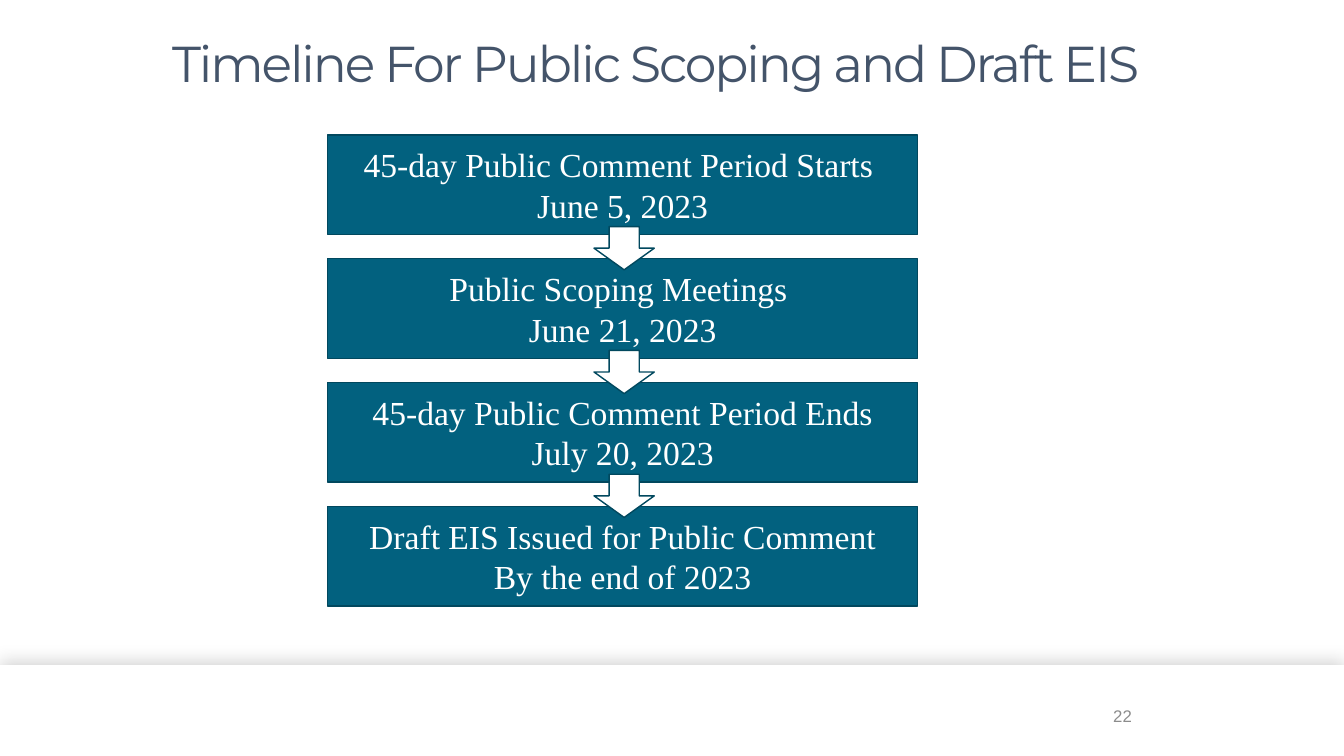
from pptx import Presentation
from pptx import util as u
from pptx.dml.color import RGBColor
from pptx.enum import shapes, text
from pptx.oxml import parse_xml
from pptx.oxml.ns import nsdecls

WHITE = RGBColor(0xFF, 0xFF, 0xFF)
TEAL = RGBColor(0x02, 0x61, 0x7F)
EDGE = RGBColor(0x01, 0x48, 0x5E)
SLATE = RGBColor(0x44, 0x54, 0x6A)
GREY = RGBColor(0x8C, 0x8C, 0x8C)

STEPS = [
    ("45-day Public Comment Period Starts ", "June 5, 2023"),
    ("Public Scoping Meetings ", "June 21, 2023"),
    ("45-day Public Comment Period Ends", "July 20, 2023"),
    ("Draft EIS Issued for Public Comment", "By the end of 2023"),
]
SHADOW = (
    f'<a:outerShdw {nsdecls("a")} blurRad="152400" dist="38100" dir="16200000" '
    'algn="b" rotWithShape="0"><a:srgbClr val="000000"><a:alpha val="17000"/>'
    '</a:srgbClr></a:outerShdw>'
)


def place(shape, left, top, width, height):
    shape.left, shape.top = u.Cm(left), u.Cm(top)
    shape.width, shape.height = u.Cm(width), u.Cm(height)


def write(shape, lines, face, size, color):
    frame = shape.text_frame
    frame.word_wrap = True
    frame.vertical_anchor = text.MSO_ANCHOR.MIDDLE
    frame.text = "\n".join(lines)
    for para in frame.paragraphs:
        para.alignment = text.PP_ALIGN.CENTER
        para.font.name = face
        para.font.size = u.Pt(size)
        para.font.color.rgb = color


def block(slide, kind, box, fill, edge=None):
    shape = slide.shapes.add_shape(kind, *map(u.Cm, box))
    shape.shadow.inherit = False
    shape.fill.solid()
    shape.fill.fore_color.rgb = fill
    if edge is None:
        shape.line.fill.background()
    else:
        shape.line.color.rgb = edge
        shape.line.width = u.Pt(1)
    return shape


def header(slide, left, top, width, height):
    title = slide.shapes.title
    place(title, left, top, width, height)
    write(title, ["Timeline For Public Scoping and Draft EIS"],
          "Montserrat", 36, SLATE)
    para = title.text_frame.paragraphs[0]
    para.line_spacing = 0.9
    # Tighter letter spacing
    para.runs[0].font._element.set("spc", "-150")


def timeline(slide, left, top, width, height):
    tall = 2.51
    pitch = (height - tall) / (len(STEPS) - 1)
    # Step boxes
    for i, lines in enumerate(STEPS):
        step = block(slide, shapes.MSO_SHAPE.RECTANGLE,
                     (left, top + i * pitch, width, tall), TEAL, EDGE)
        write(step, lines, "Times New Roman", 24, WHITE)
    # Arrows across the gaps
    wide, high = 1.52, 1.09
    for i in range(len(STEPS) - 1):
        block(slide, shapes.MSO_SHAPE.DOWN_ARROW,
              (left + (width - wide) / 2 + 0.04, top + i * pitch + tall - 0.2,
               wide, high), WHITE, EDGE)


def footer(slide, left, top, width, height):
    # Band with a soft upward shadow
    band = block(slide, shapes.MSO_SHAPE.RECTANGLE,
                 (left, top, width, height), WHITE)
    band._element.spPr.find("{*}effectLst").append(parse_xml(SHADOW))
    # Page number
    page = slide.shapes.add_textbox(u.Cm(left + 26.92), u.Cm(top + 0.77),
                                    u.Cm(2.74), u.Cm(1.02))
    write(page, ["22"], "Arial", 12, GREY)


def main():
    deck = Presentation()
    deck.slide_width, deck.slide_height = u.Cm(33.87), u.Cm(19.05)
    slide = deck.slides.add_slide(deck.slide_layouts[5])
    footer(slide, 0, 16.76, 33.87, 2.29)
    header(slide, 0, -0.1, 33.05, 3.56)
    timeline(slide, 8.26, 3.4, 14.86, 11.87)
    deck.save("out.pptx")


if __name__ == "__main__":
    main()
